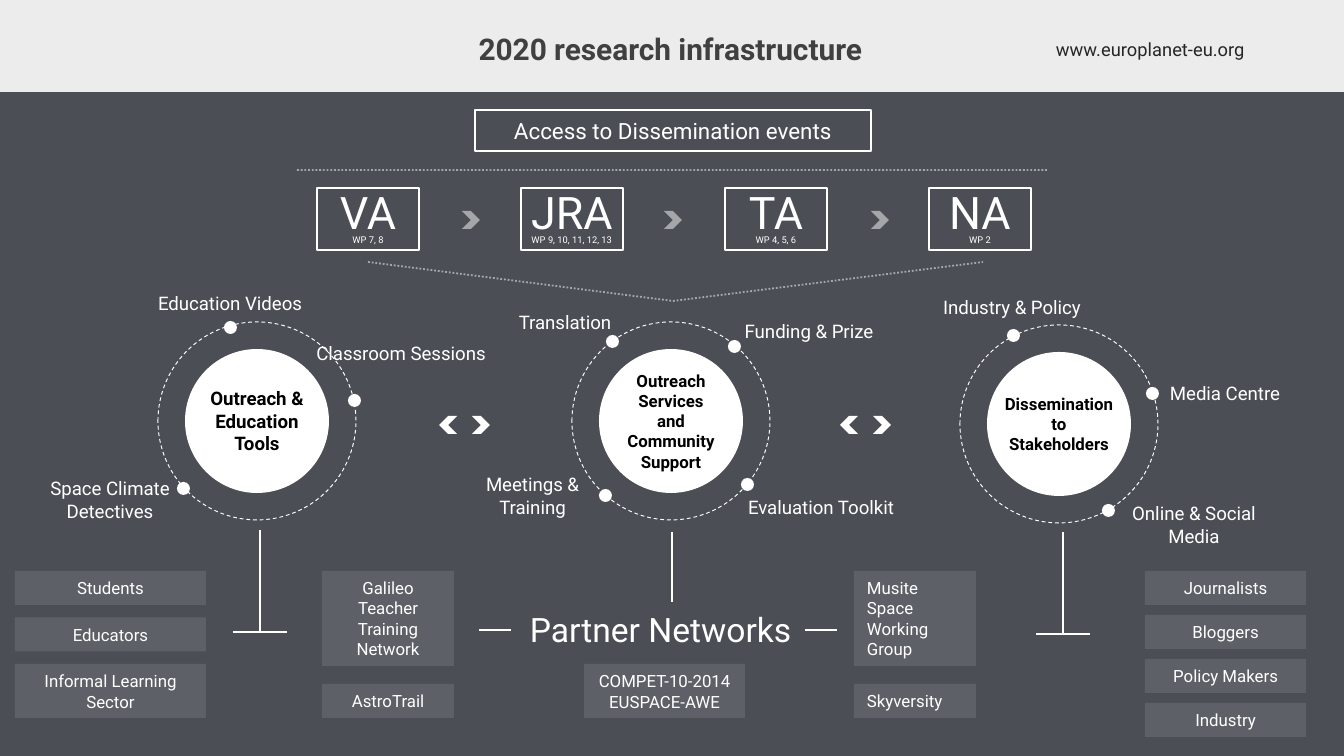
from lxml.etree import SubElement
from pptx import Presentation
from pptx.dml.color import RGBColor
from pptx.enum.dml import MSO_LINE as Dash
from pptx.enum.shapes import MSO_CONNECTOR, MSO_SHAPE as Preset
from pptx.enum.text import MSO_ANCHOR as Anchor, MSO_AUTO_SIZE, PP_ALIGN as Align
from pptx.oxml.ns import qn
from pptx.util import Pt

PX = 914400 / 134.4
FONT = "Roboto"
COLORS = {"slate": "4B4E55", "white": "FFFFFF", "black": "000000",
          "title": "404040", "address": "262626"}
INSETS = (13, 7, 13, 7)
DOT = 13
CHEVRON = 18


def emu(*lengths):
    return [round(length * PX) for length in lengths]


def rgb(name):
    return RGBColor.from_string(COLORS[name])


def set_alpha(shape, route, percent):
    """Make the colour found under route of the shape properties translucent."""
    color = shape.element.spPr.find("/".join(qn(tag) for tag in route))
    SubElement(color, qn("a:alpha"), val=str(percent * 1000))


def stroke(shape, width, dash=None, alpha=None):
    shape.line.color.rgb = rgb("white")
    shape.line.width = Pt(width)
    if dash:
        shape.line.dash_style = dash
    if alpha:
        set_alpha(shape, ("a:ln", "a:solidFill", "a:srgbClr"), alpha)


def add_preset(page, preset, box, fill=None, alpha=None, line=None, dash=None):
    shape = page.shapes.add_shape(preset, *emu(*box))
    shape.shadow.inherit = False
    if fill:
        shape.fill.solid()
        shape.fill.fore_color.rgb = rgb(fill)
        if alpha:
            set_alpha(shape, ("a:solidFill", "a:srgbClr"), alpha)
    else:
        shape.fill.background()
    if line:
        stroke(shape, line, dash)
    else:
        shape.line.fill.background()
    return shape


def add_line(page, start, end, width=0.75, dash=None, alpha=None):
    line = page.shapes.add_connector(MSO_CONNECTOR.STRAIGHT, *emu(*start, *end))
    stroke(line, width, dash, alpha)
    SubElement(line.element.spPr, qn("a:effectLst"))


def write(shape, paragraphs, size, color="white", bold=False, align=Align.CENTER,
          anchor=Anchor.TOP, insets=INSETS, spacing=None, wrap=True):
    """Fill a shape with (text, size) pairs or plain texts; newlines become line breaks."""
    frame = shape.text_frame
    frame.word_wrap = wrap
    frame.auto_size = MSO_AUTO_SIZE.NONE
    frame.vertical_anchor = anchor
    (frame.margin_left, frame.margin_top,
     frame.margin_right, frame.margin_bottom) = emu(*insets)
    for index, item in enumerate(paragraphs):
        text, points = item if isinstance(item, tuple) else (item, size)
        para = frame.add_paragraph() if index else frame.paragraphs[0]
        para.alignment = align
        if spacing:
            para.line_spacing = spacing
        for number, part in enumerate(text.split("\n")):
            if number:
                para.add_line_break()
            span = para.add_run()
            span.text = part
            span.font.name = FONT
            span.font.size = Pt(points)
            span.font.bold = bold
            span.font.color.rgb = rgb(color)


def add_label(page, box, paragraphs, size, **style):
    write(page.shapes.add_textbox(*emu(*box)), paragraphs, size, **style)


def add_header(page, box):
    x, y, width, height = box
    add_preset(page, Preset.RECTANGLE, box, "slate", alpha=10)
    add_label(page, (x + 1043, y + 19, 243, 52), ["www.europlanet-eu.org"], 9.8,
              color="address", align=Align.LEFT, anchor=Anchor.MIDDLE, spacing=1.4)
    title = page.shapes.title
    title.left, title.top, title.width, title.height = emu(x + 403, y + 24, 535, 50)
    write(title, ["2020 research infrastructure"], 16, color="title", bold=True)
    title.element.getparent().append(title.element)  # in front of the band


def add_work_packages(page, box):
    x, y, width, height = box
    banner = add_preset(page, Preset.RECTANGLE, (x + 178, y, 396, 41), line=0.75)
    write(banner, ["Access to Dissemination events"], 12)
    dotted = {"width": 1, "dash": Dash.ROUND_DOT, "alpha": 50}
    add_line(page, (x, y + 60), (x + width, y + 60), **dotted)
    packages = [("VA", "WP 7, 8"), ("JRA", "WP 9, 10, 11, 12, 13"),
                ("TA", "WP 4, 5, 6"), ("NA", "WP 2")]
    for index, (name, numbers) in enumerate(packages):
        card = add_preset(page, Preset.RECTANGLE,
                          (x + 20 + 204 * index, y + 78, 102, 62), line=0.75)
        write(card, [(name, 24), (numbers, 5)], 24, anchor=Anchor.MIDDLE,
              insets=(0, 11, 0, 5), spacing=0.7)
    for offset in (165, 367, 574):
        add_preset(page, Preset.CHEVRON, (x + offset, y + 101, CHEVRON, CHEVRON),
                   "white", alpha=50)
    outline = page.shapes.build_freeform(x + 71, y + 152, scale=PX)
    outline.add_line_segments([(x + 376, y + height), (x + 686, y + 152)], close=False)
    funnel = outline.convert_to_shape()
    funnel.shadow.inherit = False
    funnel.fill.background()
    stroke(funnel, **dotted)


def add_hub(page, box, name, size, topics, dots):
    """Ring with a filled core; topics and dots are offsets from the box corner."""
    x, y, width, height = box
    core = add_preset(page, Preset.OVAL, (x + 27, y + 27, width - 54, height - 54), "white")
    write(core, [name], size, color="black", bold=True, anchor=Anchor.MIDDLE, wrap=False)
    add_preset(page, Preset.OVAL, box, line=0.5, dash=Dash.DASH)
    for left, top, label_width, *lines in topics:
        add_label(page, (x + left, y + top, label_width, 37 if top < 0 else 59), lines, 10)
    for left, top in dots:
        add_preset(page, Preset.OVAL, (x + left, y + top, DOT, DOT), "white")


def add_exchange(page, box):
    """Pair of chevrons pointing away from each other."""
    x, y, width, height = box
    back = add_preset(page, Preset.CHEVRON, (x, y, height, height), "white")
    back.rotation = 180
    add_preset(page, Preset.CHEVRON, (x + width - height, y, height, height), "white")


def add_tee(page, box):
    """Stem standing on a short bar."""
    x, y, width, height = box
    middle, bottom = x + width / 2, y + height
    add_line(page, (middle, y), (middle, bottom))
    add_line(page, (x, bottom), (x + width, bottom))


def add_cards(page, box, cards, align=Align.CENTER):
    """Stack (height, lines) cards with equal gaps over the height of the box."""
    x, y, width, height = box
    gap = (height - sum(card[0] for card in cards)) / max(len(cards) - 1, 1)
    for card_height, *lines in cards:
        card = add_preset(page, Preset.RECTANGLE, (x, y, width, card_height),
                          "white", alpha=10)
        write(card, lines, 9, align=align)
        y += card_height + gap


def add_partners(page, box):
    x, y, width, height = box
    add_line(page, (x + 193, y), (x + 193, y + 70))
    add_label(page, (x + 38, y + 70, 305, 54), ["Partner Networks"], 18, align=Align.LEFT)
    for left in (x, x + width - 32):
        add_line(page, (left, y + 98), (left + 32, y + 98))
    add_cards(page, (x + 105, y + height - 54, 161, 54),
              [(54, "COMPET-10-2014", "EUSPACE-AWE")])


def main():
    deck = Presentation()
    deck.slide_width, deck.slide_height = emu(1344, 756)
    page = deck.slides.add_slide(deck.slide_layouts[5])
    add_header(page, (0, 0, 1344, 92))
    add_preset(page, Preset.RECTANGLE, (0, 92, 1344, 664), "slate")
    add_work_packages(page, (297, 110, 750, 191))

    add_hub(page, (158, 322, 198, 198), "Outreach &\nEducation\nTools", 10,
            [(-29, -37, 202, "Education Videos"), (142, 13, 202, "Classroom Sessions"),
             (-149, 148, 202, "Space Climate\nDetectives")],
            [(190, 72), (66, -1), (19, 160)])
    add_hub(page, (572, 322, 198, 198), "Outreach\nServices\nand\nCommunity\nSupport", 9,
            [(-108, -18, 202, "Translation"), (-108, 144, 137, "Meetings &", "Training"),
             (136, -9, 202, "Funding & Prize"), (148, 167, 202, "Evaluation Toolkit")],
            [(156, 18), (34, 13), (27, 167), (169, 156)])
    add_hub(page, (960, 325, 198, 198), "Dissemination\nto\nStakeholders", 9,
            [(-49, -36, 202, "Industry & Policy"), (164, 50, 202, "Media Centre"),
             (133, 170, 202, "Online & Social\nMedia")],
            [(186, 62), (47, 4), (142, 179)])
    for left in (439, 840):
        add_exchange(page, (left, 416, 51, CHEVRON))

    add_tee(page, (233, 530, 54, 102))
    add_tee(page, (1036, 532, 54, 102))
    add_partners(page, (479, 532, 358, 186))
    add_cards(page, (15, 571, 191, 147),
              [(34, "Students"), (34, "Educators"), (54, "Informal Learning\nSector")])
    add_cards(page, (322, 571, 132, 147),
              [(95, "Galileo Teacher Training Network"), (34, "AstroTrail")])
    add_cards(page, (854, 571, 122, 147),
              [(95, "Musite\nSpace\nWorking\nGroup"), (34, "Skyversity")], Align.LEFT)
    add_cards(page, (1145, 571, 161, 166),
              [(34, text) for text in ("Journalists", "Bloggers", "Policy Makers", "Industry")])
    deck.save("out.pptx")


if __name__ == "__main__":
    main()
